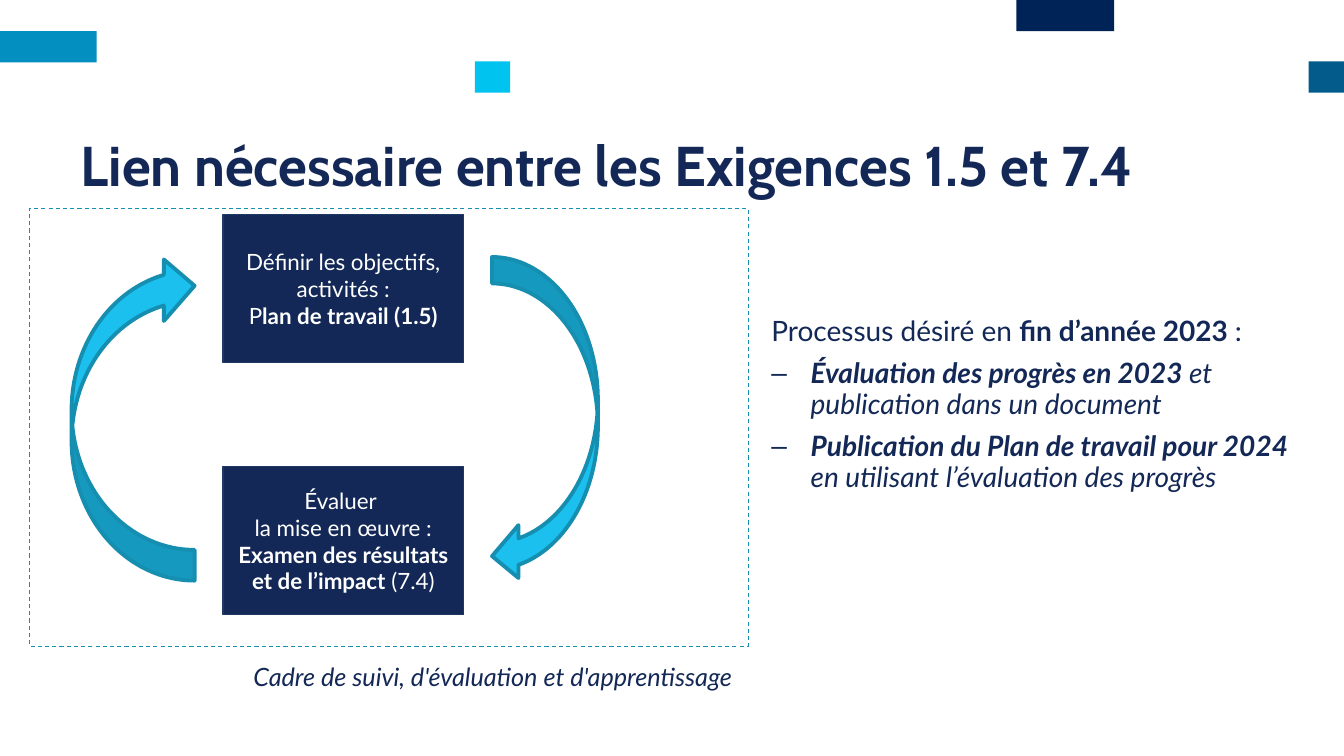
from lxml import etree
from pptx import Presentation
from pptx.dml.color import RGBColor
from pptx.enum.dml import MSO_LINE
from pptx.enum.shapes import MSO_SHAPE
from pptx.enum.text import MSO_ANCHOR, MSO_AUTO_SIZE, PP_ALIGN
from pptx.oxml.ns import qn
from pptx.util import Pt

PX = 9144  # 100 px to the inch
RECT, ARROW = MSO_SHAPE.RECTANGLE, MSO_SHAPE.CURVED_LEFT_ARROW
DASH = MSO_LINE.DASH
TOP, MIDDLE = MSO_ANCHOR.TOP, MSO_ANCHOR.MIDDLE
NO_FIT = MSO_AUTO_SIZE.NONE
LEFT, CENTER, RIGHT = PP_ALIGN.LEFT, PP_ALIGN.CENTER, PP_ALIGN.RIGHT

WHITE = RGBColor(0xFF, 0xFF, 0xFF)
NAVY = RGBColor(0x13, 0x28, 0x56)
BOX_EDGE = RGBColor(0x1F, 0x37, 0x63)
SKY = RGBColor(0x1C, 0xC0, 0xEE)
TEAL = RGBColor(0x15, 0x8E, 0xB0)
TILES = [
    (1008, 0, 97, RGBColor(0x00, 0x23, 0x57)),
    (1298, 61, 35, RGBColor(0x02, 0x5B, 0x8B)),
    (0, 31, 96, RGBColor(0x03, 0x8F, 0xBF)),
    (471, 61, 35, RGBColor(0x00, 0xC3, 0xF0)),
]


def px(*lengths):
    return [n * PX for n in lengths]


def place(sp, *box):
    sp.left, sp.top, sp.width, sp.height = px(*box)


def add_shape(slide, kind, box, fill=None, line=None, weight=1):
    sp = slide.shapes.add_shape(kind, *px(*box))
    sp.shadow.inherit = False
    if fill is None:
        sp.fill.background()
    else:
        sp.fill.solid()
        sp.fill.fore_color.rgb = fill
    if line is None:
        sp.line.fill.background()
    else:
        sp.line.color.rgb = line
        sp.line.width = Pt(weight)
    return sp


def set_frame(tf, anchor):
    tf.word_wrap = True
    tf.auto_size = NO_FIT
    tf.vertical_anchor = anchor


def write(p, runs, size, color, font="Lato", align=LEFT, italic=False):
    """Fill a paragraph with (text, bold) runs; a newline becomes a line break."""
    p.alignment = align
    for text, bold in runs:
        for i, line in enumerate(text.split("\n")):
            if i:
                p.add_line_break()
            if not line:
                continue
            r = p.add_run()
            r.text = line
            r.font.name, r.font.size = font, Pt(size)
            r.font.bold, r.font.italic = bold, italic
            r.font.color.rgb = color


def set_bullet(p, char=None, indent=0):
    pPr = p._p.get_or_add_pPr()
    pPr.set("marL", str(indent * PX))
    pPr.set("indent", str(-indent * PX))
    if char:
        etree.SubElement(pPr, qn("a:buChar")).set("char", char)
    else:
        etree.SubElement(pPr, qn("a:buNone"))


def add_tiles(slide):
    for x, y, w, color in TILES:
        add_shape(slide, RECT, (x, y, w, 31), color)


def fill_title(title):
    place(title, 70, 131, 1193, 73)
    set_frame(title.text_frame, MIDDLE)
    p = title.text_frame.paragraphs[0]
    p.line_spacing = 0.89
    write(p, [("Lien nécessaire entre les Exigences 1.5 et 7.4", True)], 40, NAVY, "Cabin")


def add_cycle(slide, x, y, w, h):
    """Dashed frame with two boxes joined by curved arrows, and its caption."""
    add_shape(slide, ARROW, (x + 459, y + 48, 105, 323), SKY, TEAL, 2.75)
    back = add_shape(slide, ARROW, (x + 42, y + 46, 122, 323), SKY, TEAL, 2.75)
    back.rotation = 180

    steps = [
        [("Définir les objectifs, activités :\nP", False), ("lan de travail (1.5)", True)],
        [("Évaluer \nla mise en œuvre :\n", False),
         ("Examen des résultats et de l’impact", True), (" (7.4)", False)],
    ]
    for i, runs in enumerate(steps):
        sp = add_shape(slide, RECT, (x + 192, y + 6 + 250 * i, 239, 147), NAVY, BOX_EDGE)
        set_frame(sp.text_frame, MIDDLE)
        write(sp.text_frame.paragraphs[0], runs, 16, WHITE, align=CENTER)

    frame = add_shape(slide, RECT, (x, y, w, h), line=TEAL, weight=0.75)
    frame.line.dash_style = DASH

    caption = slide.shapes.add_textbox(*px(x + 161, y + h + 10, w - 161, 71))
    set_frame(caption.text_frame, TOP)
    write(caption.text_frame.paragraphs[0],
          [("Cadre de suivi, d'évaluation et d'apprentissage ", False)],
          18, NAVY, align=RIGHT, italic=True)


def fill_process(body):
    place(body, 755, 309, 550, 392)
    tf = body.text_frame
    set_frame(tf, TOP)
    items = [
        [("Processus désiré en ", False), ("fin d’année 2023 ", True), (":", False)],
        [("Évaluation des progrès en 2023 ", True), ("et publication dans un document", False)],
        [("Publication du Plan de travail pour 2024 ", True),
         ("en utilisant l’évaluation des progrès", False)],
    ]
    for i, runs in enumerate(items):
        p = tf.add_paragraph() if i else tf.paragraphs[0]
        p.level = 1 if i else 0
        p.line_spacing = 0.94
        p.space_before, p.space_after = Pt(5 if i else 10), Pt(2)
        write(p, runs, 20, NAVY, italic=i > 0)
        if i:
            set_bullet(p, "–", 39)
        else:
            set_bullet(p)


def main():
    prs = Presentation()
    prs.slide_width, prs.slide_height = px(1333, 750)
    slide = prs.slides.add_slide(prs.slide_layouts[1])
    add_tiles(slide)
    fill_title(slide.shapes.title)
    add_cycle(slide, 29, 207, 713, 434)
    fill_process(slide.placeholders[1])
    prs.save("out.pptx")


if __name__ == "__main__":
    main()
